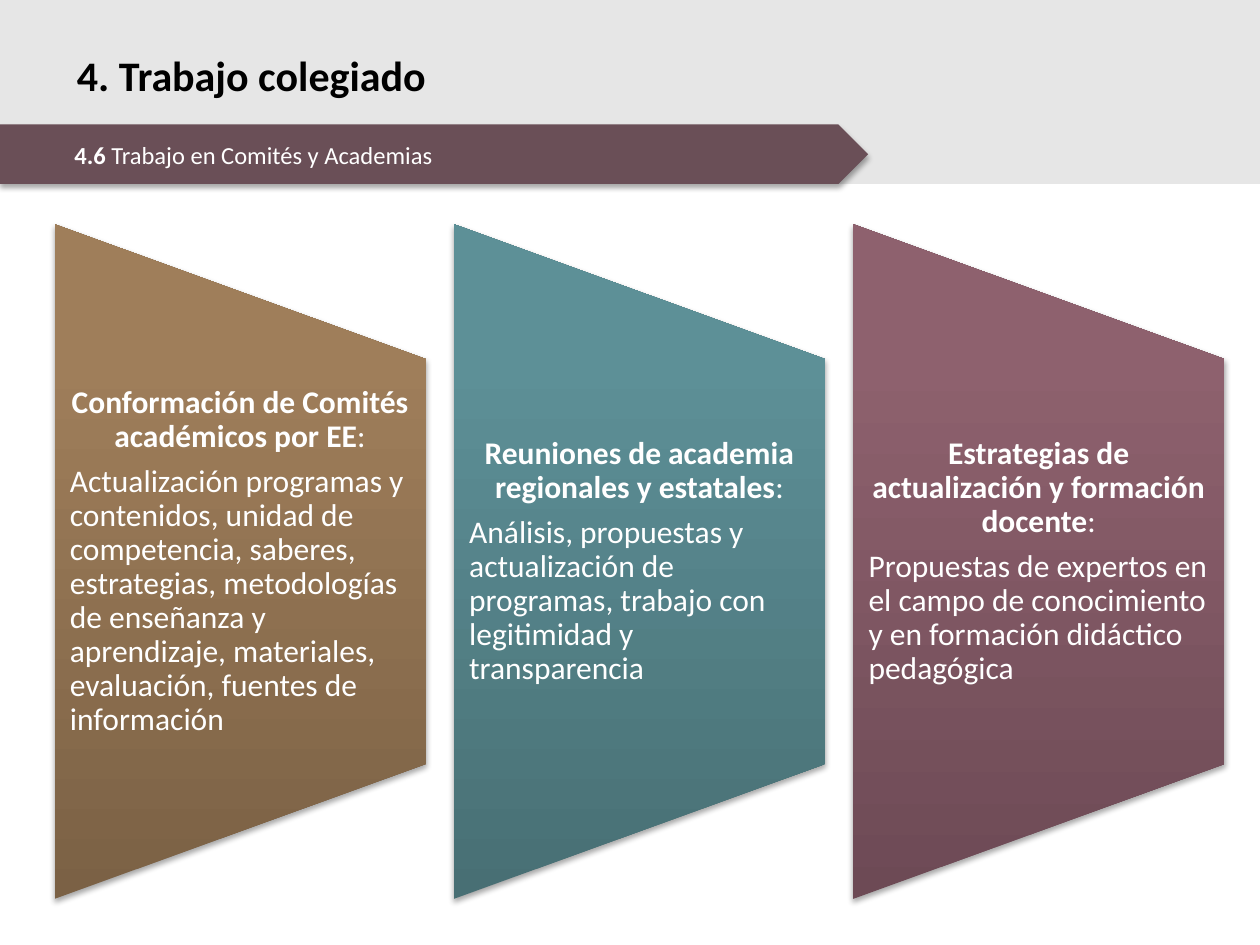
import lxml.etree
import pptx
import pptx.dml.color
import pptx.enum.shapes
import pptx.enum.text
import pptx.oxml
import pptx.oxml.ns
import pptx.util

Cm = pptx.util.Cm
Pt = pptx.util.Pt
RGBColor = pptx.dml.color.RGBColor
Shape = pptx.enum.shapes.MSO_SHAPE
Align = pptx.enum.text.PP_ALIGN
Anchor = pptx.enum.text.MSO_ANCHOR

FONT = "Calibri"
BLACK = RGBColor(0x00, 0x00, 0x00)
WHITE = RGBColor(0xFF, 0xFF, 0xFF)
BAND_GREY = RGBColor(0xE6, 0xE6, 0xE6)
PLUM = RGBColor(0x6A, 0x4F, 0x57)
BROWNS = (RGBColor(0x7B, 0x61, 0x45), RGBColor(0x9F, 0x7E, 0x5A), RGBColor(0xA1, 0x7F, 0x59))
TEALS = (RGBColor(0x48, 0x6F, 0x74), RGBColor(0x5D, 0x90, 0x97), RGBColor(0x5C, 0x92, 0x98))
MAUVES = (RGBColor(0x6D, 0x4A, 0x55), RGBColor(0x8E, 0x61, 0x6E), RGBColor(0x8F, 0x60, 0x6F))
STOPS = (0, 80, 100)

PANELS = [
    (BROWNS, "Conformación de Comités académicos por EE",
     "Actualización programas y contenidos, unidad de competencia, saberes, estrategias, "
     "metodologías de enseñanza y aprendizaje, materiales, evaluación, fuentes de información"),
    (TEALS, "Reuniones de academia regionales y estatales",
     "Análisis, propuestas y actualización de programas, trabajo con legitimidad y transparencia"),
    (MAUVES, "Estrategias de actualización y formación docente",
     "Propuestas de expertos en el campo de conocimiento y en formación didáctico pedagógica"),
]


def add_plain_shape(page, kind, left, top, width, height, color):
    """Add a preset shape with a solid fill, no line and no shadow."""
    shape = page.shapes.add_shape(kind, left, top, width, height)
    shape.shadow.inherit = False
    shape.fill.solid()
    shape.fill.fore_color.rgb = color
    shape.line.fill.background()
    return shape


def add_soft_shadow(shape):
    """Give the shape a short, blurred shadow that falls downwards."""
    effects = shape._element.spPr.find(pptx.oxml.ns.qn("a:effectLst"))
    effects.append(pptx.oxml.parse_xml(
        f'<a:outerShdw {pptx.oxml.ns.nsdecls("a")} blurRad="{Pt(3.1)}" dist="{Pt(1.8)}" '
        'dir="5400000" rotWithShape="0"><a:srgbClr val="000000">'
        '<a:alpha val="35000"/></a:srgbClr></a:outerShdw>'))


def set_upward_gradient(shape, colors):
    """Replace the solid fill by a gradient that runs from bottom to top."""
    stops = "".join(f'<a:gs pos="{stop * 1000}"><a:srgbClr val="{color}"/></a:gs>'
                    for stop, color in zip(STOPS, colors))
    gradient = pptx.oxml.parse_xml(
        f'<a:gradFill {pptx.oxml.ns.nsdecls("a")} rotWithShape="0"><a:gsLst>{stops}</a:gsLst>'
        '<a:lin ang="16200000" scaled="0"/></a:gradFill>')
    properties = shape._element.spPr
    properties.replace(properties.find(pptx.oxml.ns.qn("a:solidFill")), gradient)


def set_insets(frame, left, top, right, bottom):
    """Set the four inner margins of a text frame."""
    frame.margin_left, frame.margin_top = left, top
    frame.margin_right, frame.margin_bottom = right, bottom


def add_span(para, text, size, color, bold=False):
    """Add a formatted run to a paragraph."""
    span = para.add_run()
    span.text = text
    span.font.name = FONT
    span.font.size = Pt(size)
    span.font.bold = bold
    span.font.color.rgb = color


def add_header(page, left, top, width, height):
    """Place the grey band, the title and the section arrow."""
    band = add_plain_shape(page, Shape.RECTANGLE, left, top, width, height, BAND_GREY)
    page.shapes._spTree.insert(2, band._element)

    title = page.shapes.title
    title.left, title.top = left + Cm(1.3), top + Cm(0.5)
    title.width, title.height = Cm(19.63), Cm(2)
    frame = title.text_frame
    set_insets(frame, Cm(0.25), Cm(0.13), Cm(0.25), Cm(0.13))
    frame.vertical_anchor = Anchor.MIDDLE
    para = frame.paragraphs[0]
    para.alignment = Align.LEFT
    add_span(para, "4. Trabajo colegiado", 24, BLACK, True)

    arrow_height = Cm(1.2)
    arrow = add_plain_shape(page, Shape.PENTAGON, left, top + height - arrow_height,
                            Cm(17.5), arrow_height, PLUM)
    add_soft_shadow(arrow)
    arrow.text_frame.vertical_anchor = Anchor.MIDDLE
    para = arrow.text_frame.paragraphs[0]
    para.alignment = Align.LEFT
    para._p.get_or_add_pPr().set("marL", str(Cm(1.25)))
    add_span(para, "4.6 ", 14, WHITE, True)
    add_span(para, "Trabajo en Comités y Academias", 14, WHITE)


def add_panel(page, left, top, width, height, colors, heading, body):
    """Place a tapering panel with its heading and text."""
    offset = (height - width) // 2
    panel = add_plain_shape(page, Shape.FLOWCHART_MANUAL_OPERATION,
                            left - offset, top + offset, height, width, colors[0])
    panel.rotation = 270
    set_upward_gradient(panel, colors)
    add_soft_shadow(panel)

    box = page.shapes.add_textbox(left, top + height // 5, width, height * 3 // 5)
    frame = box.text_frame
    frame.word_wrap = True
    frame.vertical_anchor = Anchor.MIDDLE
    set_insets(frame, Cm(0.31), 0, Cm(0.32), 0)
    heading_para, body_para = frame.paragraphs[0], frame.add_paragraph()
    heading_para.alignment, body_para.alignment = Align.CENTER, Align.LEFT
    for para in (heading_para, body_para):
        para.line_spacing = 0.9
        para.space_after = Pt(6.3)
    add_span(heading_para, heading, 18, WHITE, True)
    add_span(heading_para, ":", 18, WHITE)
    add_span(body_para, body, 18, WHITE)


def add_panels(page, left, top, width, height):
    """Spread the panels evenly across the given box."""
    gap = Cm(0.56)
    panel_width = (width - gap * (len(PANELS) - 1)) // len(PANELS)
    for index, panel in enumerate(PANELS):
        add_panel(page, left + index * (panel_width + gap), top, panel_width, height, *panel)


def main():
    """Build the deck and save it."""
    deck = pptx.Presentation()
    deck.slide_width, deck.slide_height = Cm(25.4), Cm(19.05)
    page = deck.slides.add_slide(deck.slide_layouts[5])
    add_header(page, 0, 0, deck.slide_width, Cm(3.71))
    add_panels(page, Cm(1.1), Cm(4.52), Cm(23.59), Cm(13.6))
    deck.save("out.pptx")


if __name__ == "__main__":
    main()
